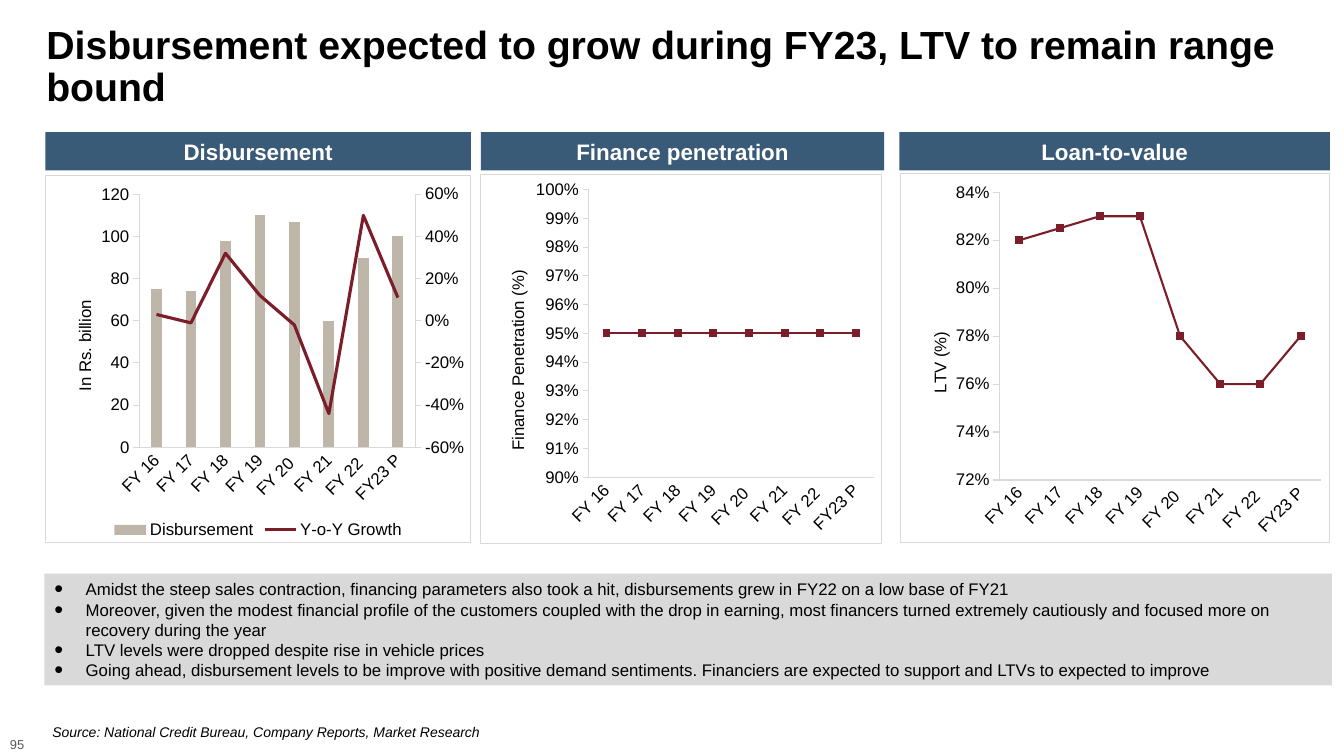
from lxml import etree
from pptx import Presentation
from pptx.chart.data import CategoryChartData
from pptx.dml.color import RGBColor
from pptx.enum.chart import XL_CHART_TYPE, XL_LEGEND_POSITION, XL_MARKER_STYLE, XL_TICK_MARK
from pptx.enum.shapes import MSO_SHAPE
from pptx.enum.text import MSO_ANCHOR, MSO_AUTO_SIZE, PP_ALIGN
from pptx.oxml import parse_xml
from pptx.oxml.ns import nsdecls, qn
from pptx.util import Inches, Pt

FONT = "Arial"
BLACK, WHITE, NAVY = "000000", "FFFFFF", "395B77"
MAROON, SAND, PALE_GREY, PAGE_GREY = "7B1E29", "BEB7A9", "D9D9D9", "595959"
YEARS = ["FY 16", "FY 17", "FY 18", "FY 19", "FY 20 ", "FY 21", "FY 22 ", "FY23 P"]
POINTS = [
    "Amidst the steep sales contraction, financing parameters also took a hit, "
    "disbursements grew in FY22 on a low base of FY21",
    "Moreover, given the modest financial profile of the customers coupled with the drop in earning, "
    "most financers turned extremely cautiously and focused more on recovery during the year",
    "LTV levels were dropped despite rise in vehicle prices",
    "Going ahead, disbursement levels to be improve with positive demand sentiments. "
    "Financiers are expected to support and LTVs to expected to improve",
]


def colour(value):
    return RGBColor.from_string(value)


def paint(fill, value):
    fill.solid()
    fill.fore_color.rgb = colour(value)


def place(shape, left, top, width, height):
    shape.left, shape.top = Inches(left), Inches(top)
    shape.width, shape.height = Inches(width), Inches(height)


def style(font, size, value=BLACK, bold=False, italic=False):
    font.name, font.size, font.bold, font.italic = FONT, Pt(size), bold, italic
    font.color.rgb = colour(value)


def style_runs(frame, *look, **flags):
    for para in frame.paragraphs:
        for span in para.runs:
            style(span.font, *look, **flags)


def add_title(page, text):
    title = page.shapes.title
    place(title, 0.46, 0.17, 12.74, 1)
    frame = title.text_frame
    frame.text = text
    frame.auto_size = MSO_AUTO_SIZE.NONE
    frame.vertical_anchor = MSO_ANCHOR.MIDDLE
    frame.margin_left = frame.margin_right = frame.margin_top = frame.margin_bottom = 0
    frame.paragraphs[0].alignment = PP_ALIGN.LEFT
    frame.paragraphs[0].line_spacing = 0.9
    style_runs(frame, 28, bold=True)


def add_points(page, points):
    body = page.placeholders[1]
    place(body, 0.44, 5.69, 12.77, 1.11)
    paint(body.fill, PALE_GREY)
    frame = body.text_frame
    frame.text = "\n".join(points)
    frame.auto_size = MSO_AUTO_SIZE.NONE
    frame.vertical_anchor = MSO_ANCHOR.MIDDLE
    for para in frame.paragraphs:
        properties = para._p.get_or_add_pPr()
        properties.set("marL", str(Inches(0.31)))
        properties.set("indent", str(Inches(-0.31)))
        for tag, name, value in (("buSzPct", "val", "150000"),
                                 ("buFont", "typeface", FONT),
                                 ("buChar", "char", "•")):
            etree.SubElement(properties, qn(f"a:{tag}")).set(name, value)
        para.alignment = PP_ALIGN.LEFT
        para.space_before = Pt(0)
    style_runs(frame, 12)


def add_header(page, text, left, width):
    header = page.shapes.add_shape(
        MSO_SHAPE.RECTANGLE, Inches(left), Inches(1.31), Inches(width), Inches(0.38))
    header.shadow.inherit = False
    paint(header.fill, NAVY)
    header.line.fill.background()
    header.text_frame.text = text
    header.text_frame.vertical_anchor = MSO_ANCHOR.MIDDLE
    header.text_frame.paragraphs[0].alignment = PP_ALIGN.CENTER
    style_runs(header.text_frame, 16, WHITE, bold=True)


def add_label(page, text, box, size, value=BLACK, italic=False, wrap=True):
    label = page.shapes.add_textbox(*map(Inches, box))
    label.text_frame.word_wrap = wrap
    label.text_frame.text = text
    style_runs(label.text_frame, size, value, italic=italic)


def set_layout(parent, position, **parts):
    layout = parent.find(qn("c:layout"))
    if layout is None:
        layout = etree.Element(qn("c:layout"))
        parent.insert(position, layout)
    manual = etree.SubElement(layout, qn("c:manualLayout"))
    for tag, value in parts.items():
        etree.SubElement(manual, qn(f"c:{tag}")).set("val", str(value))


def format_axis(axis, tick):
    axis.has_major_gridlines = False
    axis.major_tick_mark = tick
    axis.minor_tick_mark = XL_TICK_MARK.NONE
    axis.format.line.color.rgb = colour(PALE_GREY)
    axis.format.line.width = Pt(0.75)
    style(axis.tick_labels.font, 12)


def add_year_chart(page, kind, box, plot, series, axis_title, title_top, scale, number_format):
    data = CategoryChartData()
    data.categories = YEARS
    for name, values in series:
        data.add_series(name, values)
    chart = page.shapes.add_chart(kind, *map(Inches, box), data).chart
    chart.has_title = chart.has_legend = False
    style(chart.font, 12)
    chart._chartSpace.find(qn("c:chart")).addnext(parse_xml(
        f'<c:spPr {nsdecls("c", "a")}><a:solidFill><a:srgbClr val="{WHITE}"/></a:solidFill>'
        f'<a:ln w="{Pt(0.75)}"><a:solidFill><a:srgbClr val="{PALE_GREY}"/></a:solidFill></a:ln></c:spPr>'))
    format_axis(chart.category_axis, XL_TICK_MARK.NONE)
    chart.category_axis._element.find(qn("c:txPr")).find(qn("a:bodyPr")).set("rot", "-2700000")
    values_axis = chart.value_axis
    format_axis(values_axis, XL_TICK_MARK.OUTSIDE)
    values_axis.minimum_scale, values_axis.maximum_scale, values_axis.major_unit = scale
    values_axis.tick_labels.number_format = number_format
    values_axis.tick_labels.number_format_is_linked = False
    values_axis.axis_title.text_frame.text = axis_title
    style_runs(values_axis.axis_title.text_frame, 12)
    set_layout(values_axis.axis_title._element, 1, xMode="edge", yMode="edge", x=0.06, y=title_top)
    left, top, width, height = plot
    set_layout(chart._chartSpace.chart.plotArea, 0, layoutTarget="inner", xMode="edge", yMode="edge",
               x=left, y=top, w=width, h=height)
    chart.plots[0].vary_by_categories = False
    return chart


def format_line(series, width):
    series.smooth = False
    series.format.line.color.rgb = colour(MAROON)
    series.format.line.width = Pt(width)


def add_line_chart(page, *details):
    chart = add_year_chart(page, XL_CHART_TYPE.LINE_MARKERS, *details, "0%")
    series = chart.plots[0].series[0]
    format_line(series, 1.5)
    series.marker.style = XL_MARKER_STYLE.SQUARE
    series.marker.size = 5
    paint(series.marker.format.fill, MAROON)
    series.marker.format.line.color.rgb = colour(MAROON)


def move_growth_to_right_axis(chart):
    bars = chart.plots[0]._element
    growth = bars.findall(qn("c:ser"))[1]
    inverted = growth.find(qn("c:invertIfNegative"))
    if inverted is not None:
        growth.remove(inverted)
    lines = parse_xml(
        f'<c:lineChart {nsdecls("c")}><c:grouping val="standard"/><c:varyColors val="0"/>'
        '<c:marker val="1"/><c:axId val="5001"/><c:axId val="5002"/></c:lineChart>')
    lines.insert(2, growth)
    bars.addnext(lines)
    hidden_years = parse_xml(
        f'<c:catAx {nsdecls("c")}><c:axId val="5001"/><c:scaling><c:orientation val="minMax"/></c:scaling>'
        '<c:delete val="1"/><c:axPos val="b"/><c:crossAx val="5002"/></c:catAx>')
    right_axis = parse_xml(
        f'<c:valAx {nsdecls("c", "a")}><c:axId val="5002"/><c:scaling><c:orientation val="minMax"/>'
        '<c:max val="0.6"/><c:min val="-0.6"/></c:scaling><c:delete val="0"/><c:axPos val="r"/>'
        '<c:numFmt formatCode="0%" sourceLinked="0"/><c:majorTickMark val="out"/>'
        '<c:minorTickMark val="none"/><c:tickLblPos val="nextTo"/>'
        f'<c:spPr><a:ln w="{Pt(0.75)}"><a:solidFill><a:srgbClr val="{PALE_GREY}"/></a:solidFill></a:ln></c:spPr>'
        '<c:crossAx val="5001"/><c:crosses val="max"/><c:majorUnit val="0.2"/></c:valAx>')
    last_axis = chart.value_axis._element
    last_axis.addnext(hidden_years)
    hidden_years.addnext(right_axis)


def add_disbursement_chart(page):
    series = [("Disbursement", (75, 74, 98, 110, 107, 60, 90, 100)),
              ("Y-o-Y Growth", (0.03, -0.01, 0.32, 0.12, -0.02, -0.44, 0.5, 0.11))]
    chart = add_year_chart(page, XL_CHART_TYPE.COLUMN_CLUSTERED, (0.45, 1.74, 4.22, 3.65),
                           (0.22, 0.05, 0.65, 0.69), series, "In Rs. billion", 0.33, (0, 120, 20), "0")
    move_growth_to_right_axis(chart)
    bars, lines = chart.plots
    bars.gap_width, bars.overlap = 219, -27
    paint(bars.series[0].format.fill, SAND)
    format_line(lines.series[0], 2.25)
    lines.series[0].marker.style = XL_MARKER_STYLE.NONE
    chart.has_legend = True
    chart.legend.position = XL_LEGEND_POSITION.BOTTOM
    chart.legend.include_in_layout = False
    style(chart.legend.font, 12)


def main():
    deck = Presentation()
    deck.slide_width, deck.slide_height = Inches(13.33), Inches(7.5)
    page = deck.slides.add_slide(deck.slide_layouts[1])
    add_title(page, "Disbursement expected to grow during FY23, LTV to remain range bound")
    add_points(page, POINTS)
    add_label(page, "95", (0, 7.26, 0.36, 0.26), 9.2, PAGE_GREY, wrap=False)
    add_label(page, "Source: National Credit Bureau, Company Reports, Market Research",
              (0.42, 7.13, 6.22, 0.27), 10, italic=True)
    for text, left, width in (("Disbursement", 0.45, 4.22),
                              ("Finance penetration", 4.77, 4),
                              ("Loan-to-value", 8.92, 4.27)):
        add_header(page, text, left, width)
    add_disbursement_chart(page)
    add_line_chart(page, (4.76, 1.73, 3.99, 3.67), (0.27, 0.04, 0.71, 0.78),
                   [("Series 1", [0.95] * len(YEARS))],
                   "Finance Penetration (%)", 0.25, (0.9, 1, 0.01))
    add_line_chart(page, (8.93, 1.72, 4.26, 3.67), (0.23, 0.05, 0.75, 0.78),
                   [("Series 1", (0.82, 0.825, 0.83, 0.83, 0.78, 0.76, 0.76, 0.78))],
                   "LTV (%)", 0.42, (0.72, 0.84, 0.02))
    deck.save("out.pptx")


if __name__ == "__main__":
    main()
